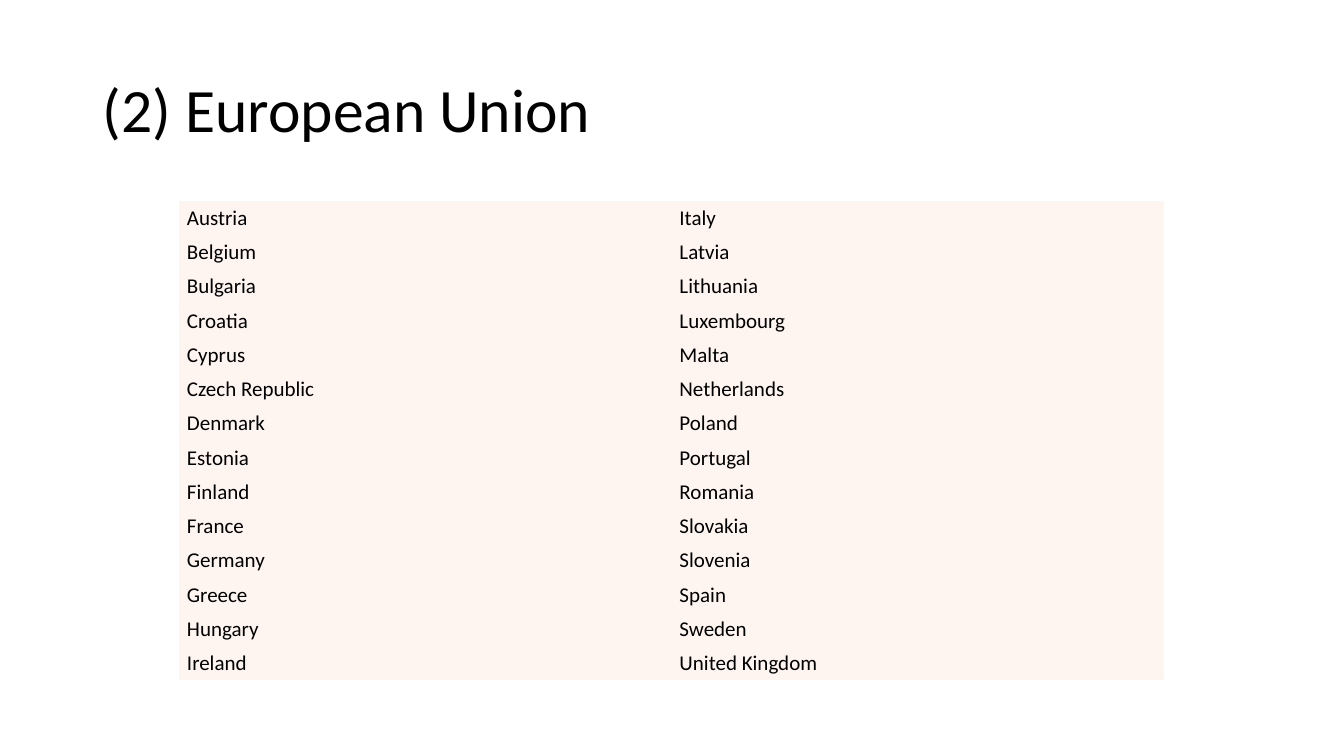
import dataclasses

import pptx
import pptx.dml.color
import pptx.enum.text
import pptx.oxml.ns
import pptx.util

MIDDLE = pptx.enum.text.MSO_ANCHOR.MIDDLE
PLAIN_TABLE_STYLE = "{2D5ABB26-0587-4C30-8999-92F81FD0307C}"


@dataclasses.dataclass(frozen=True)
class Theme:
    font: str = "Calibri"
    ink: str = "000000"
    cell_fill: str = "FEF5F1"
    title_size: int = 44
    cell_size: int = 15


class PageBuilder:
    """Draws titles and tables on one page in a shared theme."""

    def __init__(self, page, theme):
        self.page = page
        self.theme = theme

    @staticmethod
    def px(length):
        return pptx.util.Inches(length / 100.8)

    @staticmethod
    def color(value):
        return pptx.dml.color.RGBColor.from_string(value)

    def add_span(self, para, text, size):
        span = para.add_run()
        span.text = text
        span.font.name = self.theme.font
        span.font.size = pptx.util.Pt(size)
        span.font.color.rgb = self.color(self.theme.ink)

    def title(self, text, *bounds):
        box = self.page.shapes.add_textbox(*map(self.px, bounds))
        frame = box.text_frame
        frame.word_wrap = True
        frame.vertical_anchor = MIDDLE
        para = frame.paragraphs[0]
        para.line_spacing = 0.9
        self.add_span(para, text, self.theme.title_size)

    def cell(self, cell, text):
        cell.fill.solid()
        cell.fill.fore_color.rgb = self.color(self.theme.cell_fill)
        cell.vertical_anchor = MIDDLE
        cell.margin_left = cell.margin_right = self.px(8)
        cell.margin_top = cell.margin_bottom = self.px(4)
        self.add_span(cell.text_frame.paragraphs[0], text, self.theme.cell_size)

    def table(self, rows, *bounds):
        table = self.page.shapes.add_table(
            len(rows), len(rows[0]), *map(self.px, bounds)
        ).table
        table.first_row = table.horz_banding = False
        style = table._tbl.tblPr.find(pptx.oxml.ns.qn("a:tableStyleId"))
        style.text = PLAIN_TABLE_STYLE
        for row_index, row in enumerate(rows):
            for column_index, text in enumerate(row):
                self.cell(table.cell(row_index, column_index), text)


def main():
    first_half = [
        "Austria", "Belgium", "Bulgaria", "Croatia", "Cyprus",
        "Czech Republic", "Denmark", "Estonia", "Finland", "France",
        "Germany", "Greece", "Hungary", "Ireland",
    ]
    second_half = [
        "Italy", "Latvia", "Lithuania", "Luxembourg", "Malta",
        "Netherlands", "Poland", "Portugal", "Romania", "Slovakia",
        "Slovenia", "Spain", "Sweden", "United Kingdom",
    ]
    deck = pptx.Presentation()
    deck.slide_width = PageBuilder.px(1344)
    deck.slide_height = PageBuilder.px(756)
    page = deck.slides.add_slide(deck.slide_layouts[6])
    builder = PageBuilder(page, Theme())
    builder.title("(2) European Union", 93, 40, 1159, 146)
    builder.table(list(zip(first_half, second_half)), 179, 201, 985, 480)
    deck.save("out.pptx")


if __name__ == "__main__":
    main()
